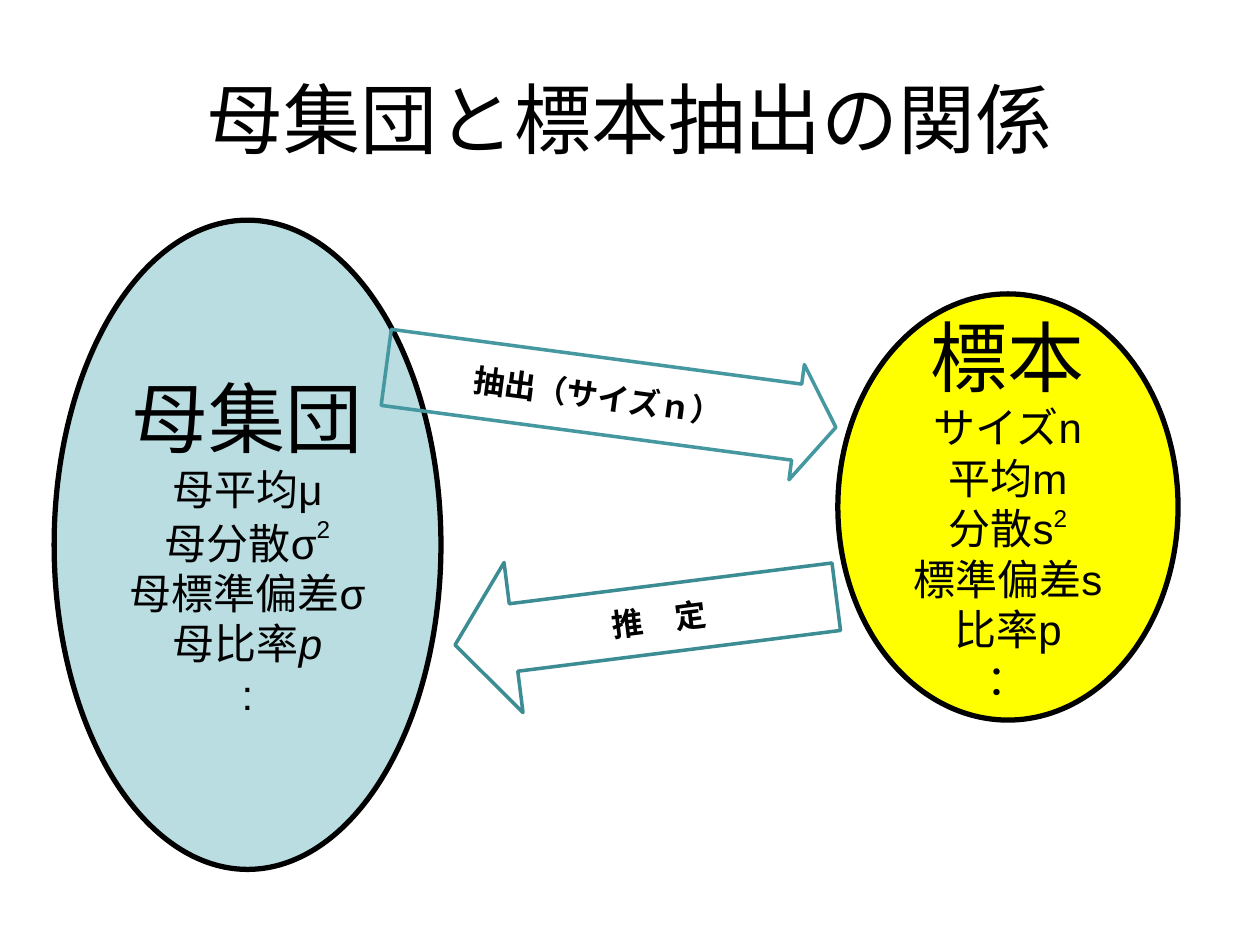
from pptx import Presentation
from pptx.dml.color import RGBColor
from pptx.enum.shapes import MSO_SHAPE as Shape
from pptx.enum.text import MSO_ANCHOR as Anchor, PP_ALIGN as Align
from pptx.util import Inches, Pt

WIDE, HIGH = Inches(10), Inches(7.5)
BLACK = RGBColor(0x00, 0x00, 0x00)
BLUE = RGBColor(0xBA, 0xDD, 0xE1)
YELLOW = RGBColor(0xFF, 0xFF, 0x00)
TEAL = RGBColor(0x45, 0x97, 0xA0)
DARK = RGBColor(0x3C, 0x8C, 0x93)
FONT = "Arial"
HEAD, BODY, LABEL = 44, 24, 18


def place(x, y, w, h):
    """Turn shares of the slide's size into lengths."""
    return [round(v) for v in (x * WIDE, y * HIGH, w * WIDE, h * HIGH)]


def style(para, size, bold=False):
    para.alignment = Align.CENTER
    font = para.font
    font.name, font.size, font.bold = FONT, Pt(size), bold
    font.color.rgb = BLACK


def frame(shape):
    """Give the shape's text frame, centred and without side margins."""
    text = shape.text_frame
    text.word_wrap = True
    text.vertical_anchor = Anchor.MIDDLE
    text.margin_left = text.margin_right = 0
    return text


def add_title(slide, box, words):
    text = frame(slide.shapes.add_textbox(*place(*box)))
    text.text = words
    style(text.paragraphs[0], HEAD)


def add_form(slide, kind, box, line, width, fill=None):
    shape = slide.shapes.add_shape(kind, *place(*box))
    shape.shadow.inherit = False
    shape.line.color.rgb, shape.line.width = line, Pt(width)
    if fill is None:
        shape.fill.background()
    else:
        shape.fill.solid()
        shape.fill.fore_color.rgb = fill
    return shape


def add_oval(slide, box, fill, head, rows, rise):
    """Draw a set; each row is its words, then an optional power and italic tail."""
    text = frame(add_form(slide, Shape.OVAL, box, BLACK, 3, fill))
    text.text = head
    style(text.paragraphs[0], HEAD)
    for words, power, tail in rows:
        para = text.add_paragraph()
        style(para, BODY)
        para.add_run().text = words
        if power:
            run = para.add_run()
            run.text = power
            run.font._element.set("baseline", str(rise * 1000))
        if tail:
            run = para.add_run()
            run.text = tail
            run.font.italic = True


def add_arrow(slide, box, line, words, turn, shaft, tip, flip=False):
    shape = add_form(slide, Shape.RIGHT_ARROW, box, line, 2)
    shape.adjustments[0], shape.adjustments[1] = shaft, tip
    shape.rotation = turn
    if flip:
        shape._element.spPr.xfrm.set("flipH", "1")
    text = frame(shape)
    text.text = words
    style(text.paragraphs[0], LABEL, bold=True)


def main():
    deck = Presentation()
    deck.slide_width, deck.slide_height = WIDE, HIGH
    slide = deck.slides.add_slide(deck.slide_layouts[6])

    add_title(slide, (0.05, 0.04, 0.9, 0.17), "母集団と標本抽出の関係")
    add_oval(slide, (0.043, 0.233, 0.307, 0.687), BLUE, "母集団", [
        ("母平均μ", "", ""), ("母分散σ", "2", ""), ("母標準偏差σ", "", ""),
        ("母比率", "", "p"), (":", "", "")], rise=50)
    add_arrow(slide, (0.305, 0.359, 0.36, 0.123), TEAL, "抽出（サイズｎ）",
              7.6, 0.66, 0.34)
    add_arrow(slide, (0.36, 0.577, 0.305, 0.16), DARK, "推　定",
              352.8, 0.45, 0.39, flip=True)
    add_oval(slide, (0.665, 0.311, 0.27, 0.451), YELLOW, "標本", [
        ("サイズn", "", ""), ("平均m", "", ""), ("分散s", "2", ""),
        ("標準偏差s", "", ""), ("比率p", "", ""), ("：", "", "")], rise=42)

    deck.save("out.pptx")


if __name__ == "__main__":
    main()
